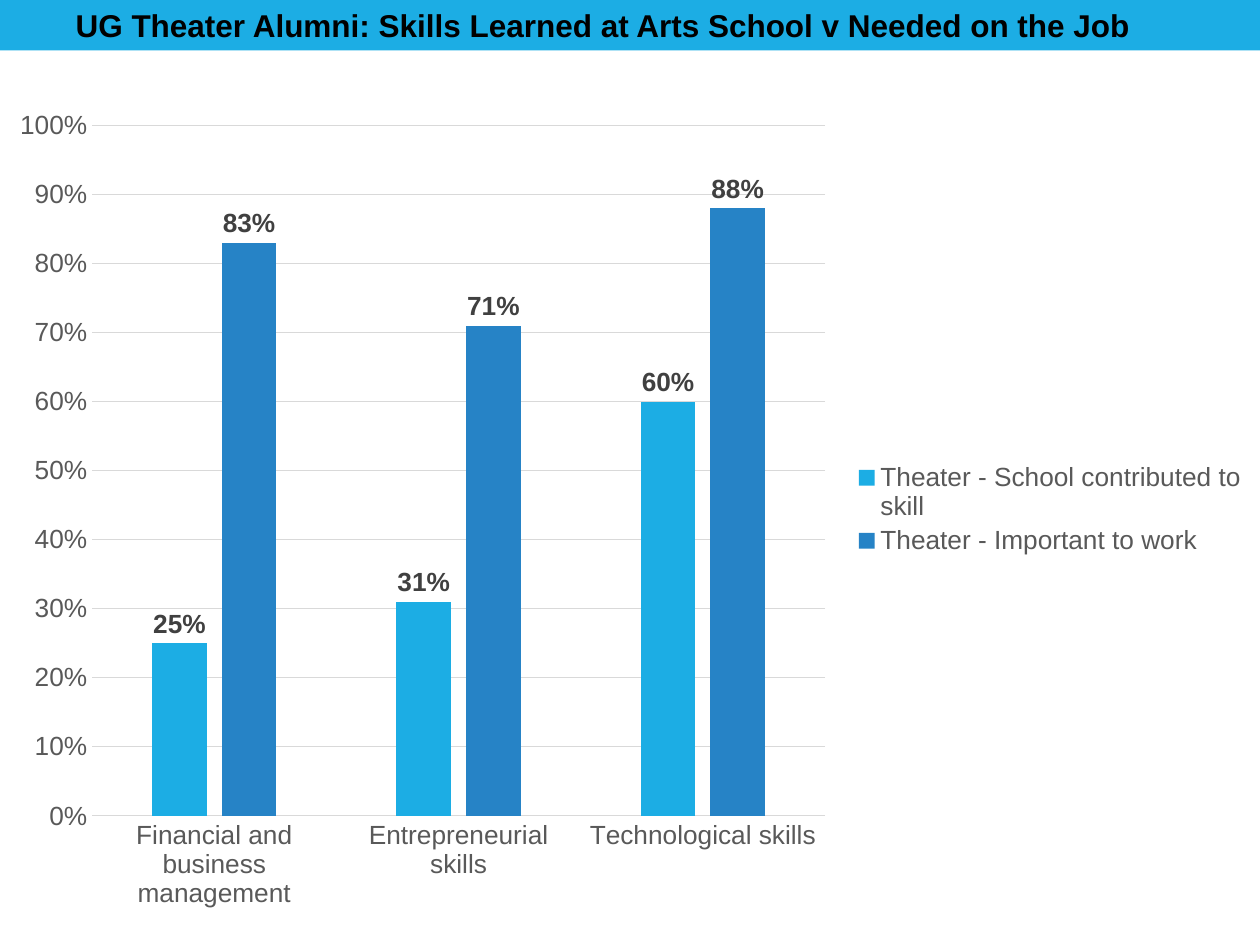
from dataclasses import dataclass

from pptx import Presentation
from pptx.chart import data as chart_data
from pptx.dml import color
from pptx.enum import chart as charts, shapes, text
from pptx.util import Pt


@dataclass(frozen=True)
class Theme:
    font: str = "Arial"
    title_size: int = 18
    chart_size: int = 15
    black: str = "000000"
    axis_text: str = "595959"
    label_text: str = "404040"
    grid: str = "D9D9D9"
    light_blue: str = "1CADE4"
    dark_blue: str = "2683C6"


THEME = Theme()
BAND_HEIGHT = 28.8
CATEGORIES = ["Financial and business management", "Entrepreneurial skills", "Technological skills"]
SERIES = [
    ("Theater - School contributed to skill", [0.25, 0.31, 0.6], THEME.light_blue),
    ("Theater - Important to work", [0.83, 0.71, 0.88], THEME.dark_blue),
]


def rgb(value):
    return color.RGBColor.from_string(value)


def style_font(font, size, value, bold=False):
    font.name = THEME.font
    font.size = Pt(size)
    font.color.rgb = rgb(value)
    font.bold = bold


def style_line(line):
    line.color.rgb = rgb(THEME.grid)
    line.width = Pt(0.75)


def add_title(page, wording):
    title = page.shapes.title
    title.left, title.top, title.width, title.height = Pt(36), Pt(0), Pt(666), Pt(BAND_HEIGHT)
    frame = title.text_frame
    frame.text = wording
    frame.word_wrap = True
    frame.auto_size = text.MSO_AUTO_SIZE.NONE
    frame.vertical_anchor = text.MSO_ANCHOR.MIDDLE
    frame.margin_top = frame.margin_bottom = Pt(3.6)
    para = frame.paragraphs[0]
    para.alignment = text.PP_ALIGN.LEFT
    style_font(para.runs[0].font, THEME.title_size, THEME.black, bold=True)


def add_title_band(page, width):
    band = page.shapes.add_shape(shapes.MSO_SHAPE.RECTANGLE, Pt(0), Pt(0), width, Pt(BAND_HEIGHT))
    band.shadow.inherit = False
    band.fill.solid()
    band.fill.fore_color.rgb = rgb(THEME.light_blue)
    band.line.fill.background()
    page.shapes.title._element.addprevious(band._element)


def style_axes(chart):
    for axis in (chart.category_axis, chart.value_axis):
        axis.major_tick_mark = axis.minor_tick_mark = charts.XL_TICK_MARK.NONE
        style_font(axis.tick_labels.font, THEME.chart_size, THEME.axis_text)
    style_line(chart.category_axis.format.line)
    values = chart.value_axis
    values.minimum_scale, values.maximum_scale, values.major_unit = 0, 1, 0.1
    values.tick_labels.number_format = "0%"
    values.tick_labels.number_format_is_linked = False
    values.format.line.fill.background()
    style_line(values.major_gridlines.format.line)


def style_series(series, fill):
    series.format.fill.solid()
    series.format.fill.fore_color.rgb = rgb(fill)
    labels = series.data_labels
    labels.show_value = True
    labels.number_format = "0%"
    labels.number_format_is_linked = False
    labels.position = charts.XL_LABEL_POSITION.OUTSIDE_END
    style_font(labels.font, THEME.chart_size, THEME.label_text, bold=True)


def add_skills_chart(page):
    data = chart_data.CategoryChartData(number_format="0%")
    data.categories = CATEGORIES
    for name, values, _ in SERIES:
        data.add_series(name, values)
    chart = page.shapes.add_chart(
        charts.XL_CHART_TYPE.COLUMN_CLUSTERED, Pt(-3), Pt(54), Pt(723), Pt(474), data
    ).chart
    style_font(chart.font, THEME.chart_size, THEME.black)
    chart.has_title = False
    chart.has_legend = True
    chart.legend.position = charts.XL_LEGEND_POSITION.RIGHT
    chart.legend.include_in_layout = False
    style_font(chart.legend.font, THEME.chart_size, THEME.axis_text)
    style_axes(chart)
    plot = chart.plots[0]
    plot.gap_width, plot.overlap = 219, -27
    plot.vary_by_categories = False
    for series, (_, _, fill) in zip(plot.series, SERIES):
        style_series(series, fill)


def main():
    deck = Presentation()
    deck.slide_width, deck.slide_height = Pt(720), Pt(540)
    page = deck.slides.add_slide(deck.slide_layouts[5])
    add_title(page, "UG Theater Alumni: Skills Learned at Arts School v Needed on the Job")
    add_title_band(page, deck.slide_width)
    add_skills_chart(page)
    deck.save("out.pptx")


if __name__ == "__main__":
    main()
